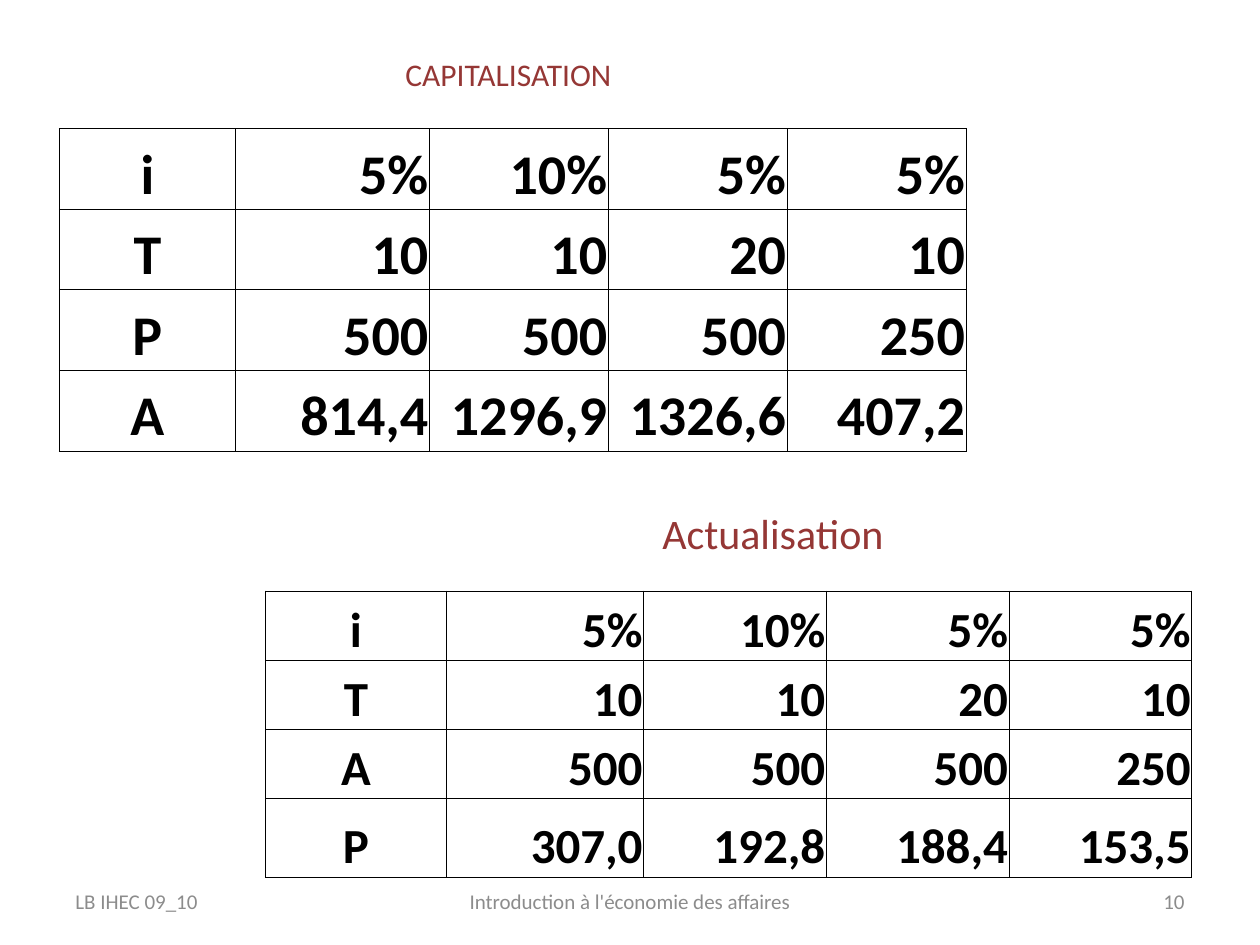
"""Build the slide comparing capitalisation and actualisation tables."""
from dataclasses import dataclass

from lxml import etree
from pptx import Presentation
from pptx.dml.color import RGBColor
from pptx.enum.text import MSO_ANCHOR, PP_ALIGN
from pptx.oxml.ns import qn
from pptx.util import Inches, Pt

LEFT, CENTER, RIGHT = PP_ALIGN.LEFT, PP_ALIGN.CENTER, PP_ALIGN.RIGHT
TOP, MIDDLE, BOTTOM = MSO_ANCHOR.TOP, MSO_ANCHOR.MIDDLE, MSO_ANCHOR.BOTTOM


@dataclass(frozen=True)
class Theme:
    font: str = "Calibri"
    ink: str = "000000"
    accent: str = "953735"
    muted: str = "8C8C8C"
    footer_size: int = 12
    border_width: float = 0.5
    cell_inset: float = 0.01


THEME = Theme()
SLIDE_WIDTH, SLIDE_HEIGHT = 10, 7.5
MARGIN = SLIDE_WIDTH * 0.05
FOOTER_TOP, FOOTER_HEIGHT = 6.95, 0.4
SIDE_WIDTH, MIDDLE_WIDTH = 2.33, 3.17

TABLES = [
    {
        "left": 0.47, "top": 1.02, "size": 32,
        "columns": [1.4, 1.54] + [1.42] * 3,
        "heights": [0.64] * 4,
        "rows": [
            ("i", "5%", "10%", "5%", "5%"),
            ("T", "10", "10", "20", "10"),
            ("P", "500", "500", "500", "250"),
            ("A", "814,4", "1296,9", "1326,6", "407,2"),
        ],
    },
    {
        "left": 2.11, "top": 4.69, "size": 28,
        "columns": [1.43, 1.57] + [1.45] * 3,
        "heights": [0.55] * 3 + [0.62],
        "rows": [
            ("i", "5%", "10%", "5%", "5%"),
            ("T", "10", "10", "20", "10"),
            ("A", "500", "500", "500", "250"),
            ("P", "307,0", "192,8", "188,4", "153,5"),
        ],
    },
]
TITLES = [
    ("CAPITALISATION", (3.12, 0.39, 3.83, 0.44), 18, LEFT),
    ("Actualisation", (4.22, 3.98, 3.83, 0.51), 24, CENTER),
]
FOOTERS = [
    ("LB IHEC 09_10", MARGIN, SIDE_WIDTH, LEFT),
    ("10", SLIDE_WIDTH - MARGIN - SIDE_WIDTH, SIDE_WIDTH, RIGHT),
    ("Introduction à l'économie des affaires",
     (SLIDE_WIDTH - MIDDLE_WIDTH) / 2, MIDDLE_WIDTH, CENTER),
]


def write_text(text_frame, text, size, color, alignment, bold=False):
    paragraph = text_frame.paragraphs[0]
    paragraph.alignment = alignment
    run = paragraph.add_run()
    run.text = text
    run.font.name = THEME.font
    run.font.size = Pt(size)
    run.font.bold = bold
    run.font.color.rgb = RGBColor.from_string(color)


def add_label(slide, text, box, size, color, alignment, anchor):
    text_frame = slide.shapes.add_textbox(*map(Inches, box)).text_frame
    text_frame.word_wrap = True
    text_frame.vertical_anchor = anchor
    write_text(text_frame, text, size, color, alignment)


def add_borders(cell):
    properties = cell._tc.get_or_add_tcPr()
    for side in ("lnL", "lnR", "lnT", "lnB"):
        line = etree.SubElement(properties, qn(f"a:{side}"), w=str(Pt(THEME.border_width)))
        fill = etree.SubElement(line, qn("a:solidFill"))
        etree.SubElement(fill, qn("a:srgbClr"), val=THEME.ink)


def add_value_table(slide, content):
    rows, columns, heights = content["rows"], content["columns"], content["heights"]
    box = (content["left"], content["top"], sum(columns), sum(heights))
    table = slide.shapes.add_table(len(rows), len(columns), *map(Inches, box)).table
    table.first_row = table.horz_banding = False
    for column, width in zip(table.columns, columns):
        column.width = Inches(width)
    for row, height, values in zip(table.rows, heights, rows):
        row.height = Inches(height)
        for index, (cell, value) in enumerate(zip(row.cells, values)):
            cell.margin_left = cell.margin_right = cell.margin_top = Inches(THEME.cell_inset)
            cell.margin_bottom = 0
            cell.vertical_anchor = BOTTOM
            add_borders(cell)
            cell.fill.background()
            alignment = RIGHT if index else CENTER
            write_text(cell.text_frame, value, content["size"], THEME.ink, alignment, bold=True)


def main():
    presentation = Presentation()
    presentation.slide_width = Inches(SLIDE_WIDTH)
    presentation.slide_height = Inches(SLIDE_HEIGHT)
    slide = presentation.slides.add_slide(presentation.slide_layouts[6])
    for content in TABLES:
        add_value_table(slide, content)
    for text, box, size, alignment in TITLES:
        add_label(slide, text, box, size, THEME.accent, alignment, TOP)
    for text, left, width, alignment in FOOTERS:
        box = (left, FOOTER_TOP, width, FOOTER_HEIGHT)
        add_label(slide, text, box, THEME.footer_size, THEME.muted, alignment, MIDDLE)
    presentation.save("out.pptx")


if __name__ == "__main__":
    main()
